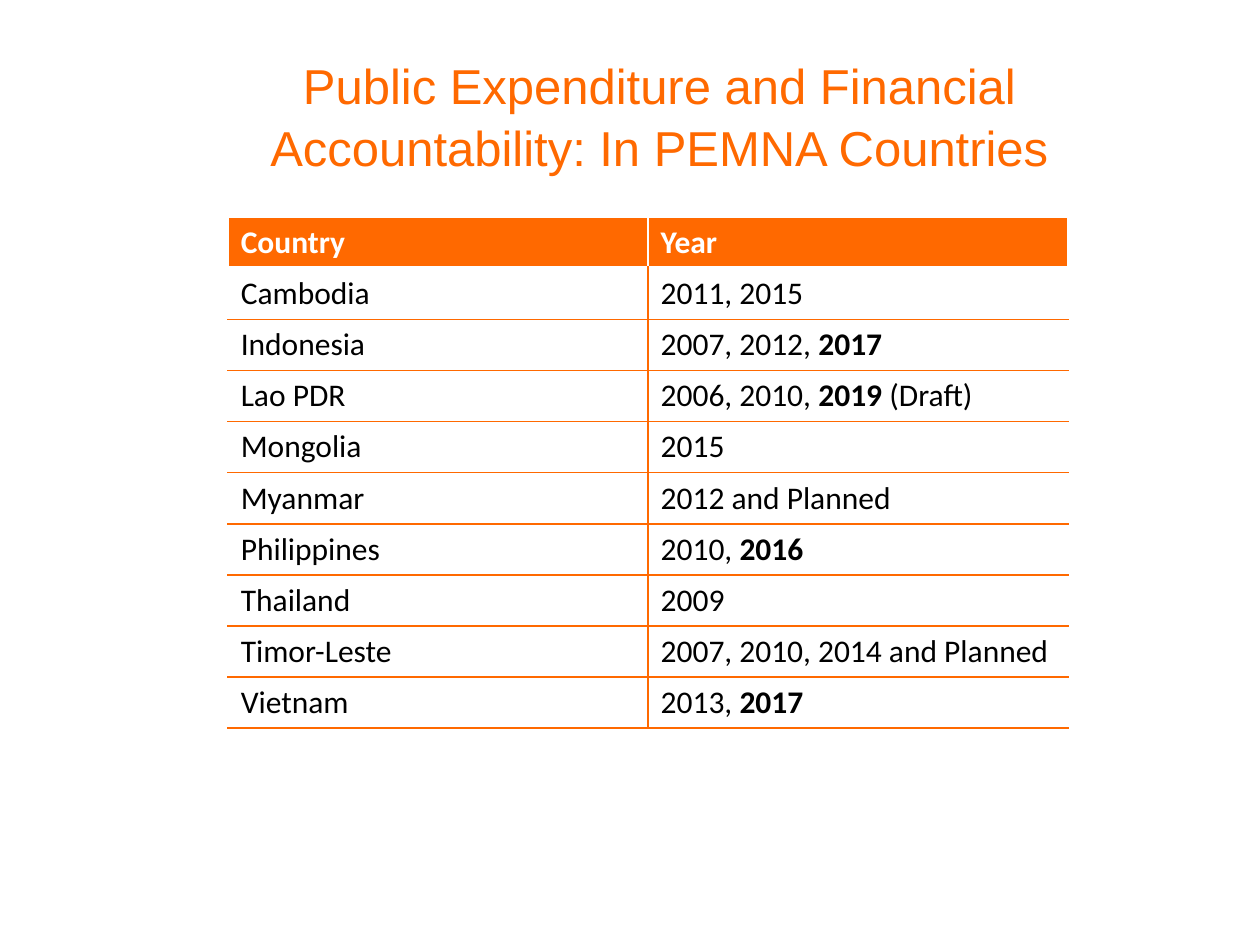
import pptx
import pptx.dml.color
import pptx.enum.text
import pptx.oxml
import pptx.oxml.ns
import pptx.util
from pptx.util import Cm

COLOURS = {"orange": "FF6900", "white": "FFFFFF", "black": "000000"}

# Each row is a country and its assessment years as (text, bold) pieces
HEADINGS = ("Country", "Year")
ASSESSMENTS = [
    ("Cambodia", [("2011, 2015", False)]),
    ("Indonesia", [("2007, 2012, ", False), ("2017", True)]),
    ("Lao PDR", [("2006, 2010, ", False), ("2019 ", True), ("(Draft)", False)]),
    ("Mongolia", [("2015", False)]),
    ("Myanmar", [("2012 and Planned", False)]),
    ("Philippines", [("2010, ", False), ("2016", True)]),
    ("Thailand", [("2009", False)]),
    ("Timor-Leste", [("2007, 2010, 2014 and Planned", False)]),
    ("Vietnam", [("2013, ", False), ("2017", True)]),
]


def add_span(para, text, font, size, colour, bold=False):
    span = para.add_run()
    span.text = text
    span.font.name = font
    span.font.size = pptx.util.Pt(size)
    span.font.bold = bold
    span.font.color.rgb = pptx.dml.color.RGBColor.from_string(COLOURS[colour])


def set_borders(cell, borders):
    """Borders map a side (L, R, T, B) to a colour name and a width in points."""
    properties = cell._tc.get_or_add_tcPr()
    for position, side in enumerate("LRTB"):
        colour, width = borders[side]
        line = pptx.oxml.parse_xml(
            f'<a:ln{side} {pptx.oxml.ns.nsdecls("a")} w="{pptx.util.Pt(width)}">'
            f'<a:solidFill><a:srgbClr val="{COLOURS[colour]}"/></a:solidFill>'
            f'</a:ln{side}>')
        properties.insert(position, line)


def fill_cell(cell, pieces, colour, fill, borders):
    para = cell.text_frame.paragraphs[0]
    for text, bold in pieces:
        add_span(para, text, "Calibri", 18, colour, bold)
    if fill:
        cell.fill.solid()
        cell.fill.fore_color.rgb = pptx.dml.color.RGBColor.from_string(COLOURS[fill])
    else:
        cell.fill.background()
    set_borders(cell, borders)


def add_title(page, text):
    box = page.shapes.title
    box.left, box.top, box.width, box.height = Cm(3.6), Cm(0.94), Cm(19.38), Cm(2.64)
    frame = box.text_frame
    frame.word_wrap = True
    frame.vertical_anchor = pptx.enum.text.MSO_ANCHOR.TOP
    para = frame.paragraphs[0]
    para.alignment = pptx.enum.text.PP_ALIGN.CENTER
    para.line_spacing = 1.05
    add_span(para, text, "Arial", 28, "orange")


def add_assessment_table(page):
    row_count = len(ASSESSMENTS) + 1
    table = page.shapes.add_table(row_count, 2, Cm(4.6), Cm(4.38),
                                  Cm(16.93), Cm(1.03) * row_count).table
    table.horz_banding = False

    # Header row
    header_borders = {side: ("white", 1) for side in "LRT"} | {"B": ("white", 3)}
    for column, heading in enumerate(HEADINGS):
        fill_cell(table.cell(0, column), [(heading, True)], "white", "orange",
                  header_borders)

    # Country rows: orange rules inside, white outer sides
    for row, (country, years) in enumerate(ASSESSMENTS, start=1):
        top = ("white", 3) if row == 1 else ("orange", 1)
        for column, pieces in enumerate(([(country, False)], years)):
            borders = {
                "L": ("orange" if column else "white", 1),
                "R": ("white" if column else "orange", 1),
                "T": top,
                "B": ("orange", 1),
            }
            fill_cell(table.cell(row, column), pieces, "black", None, borders)


def main():
    deck = pptx.Presentation()
    deck.slide_width, deck.slide_height = Cm(25.4), Cm(19.05)
    page = deck.slides.add_slide(deck.slide_layouts[5])
    add_assessment_table(page)
    add_title(page, "Public Expenditure and Financial Accountability: "
                    "In PEMNA Countries")
    deck.save("out.pptx")


if __name__ == "__main__":
    main()
